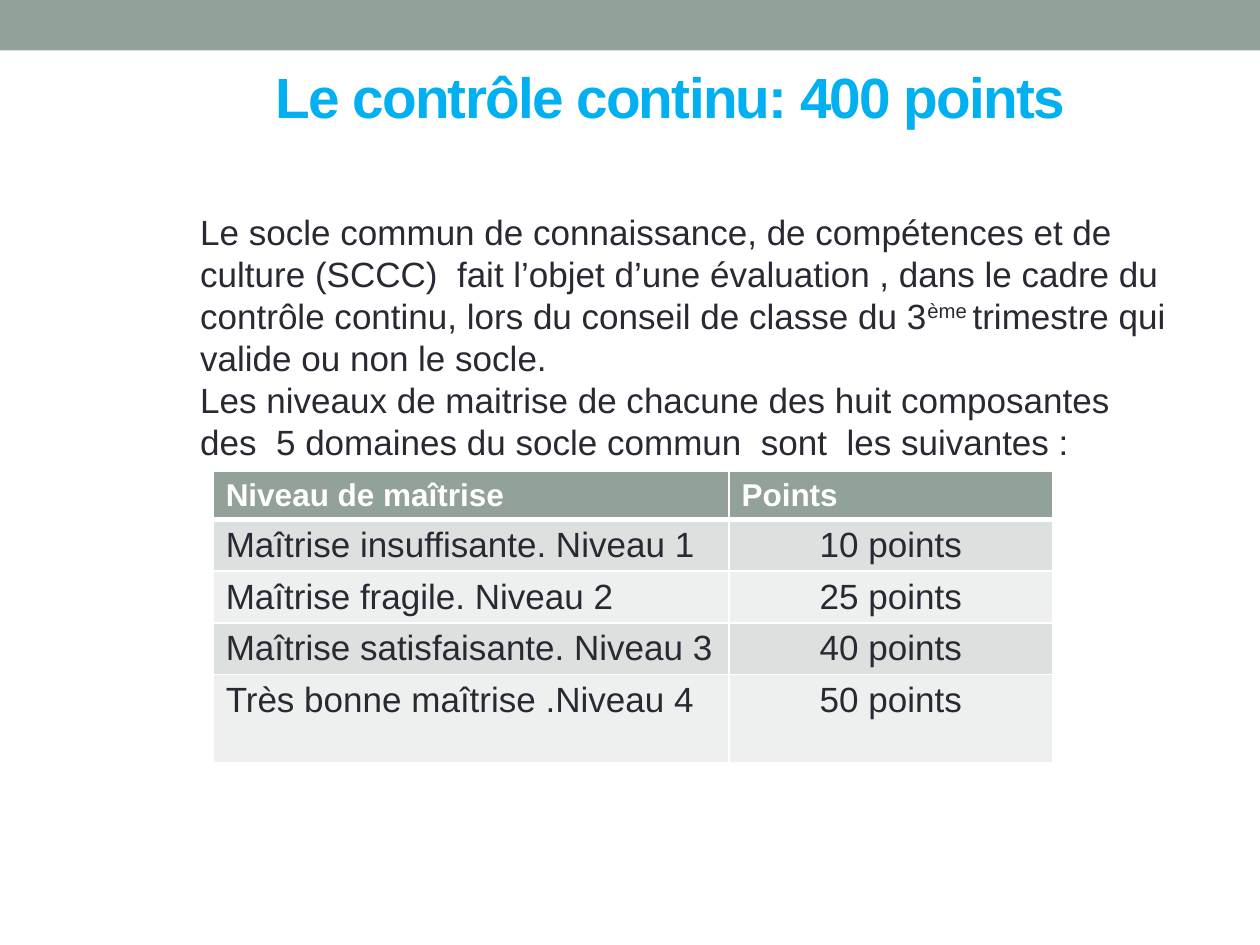
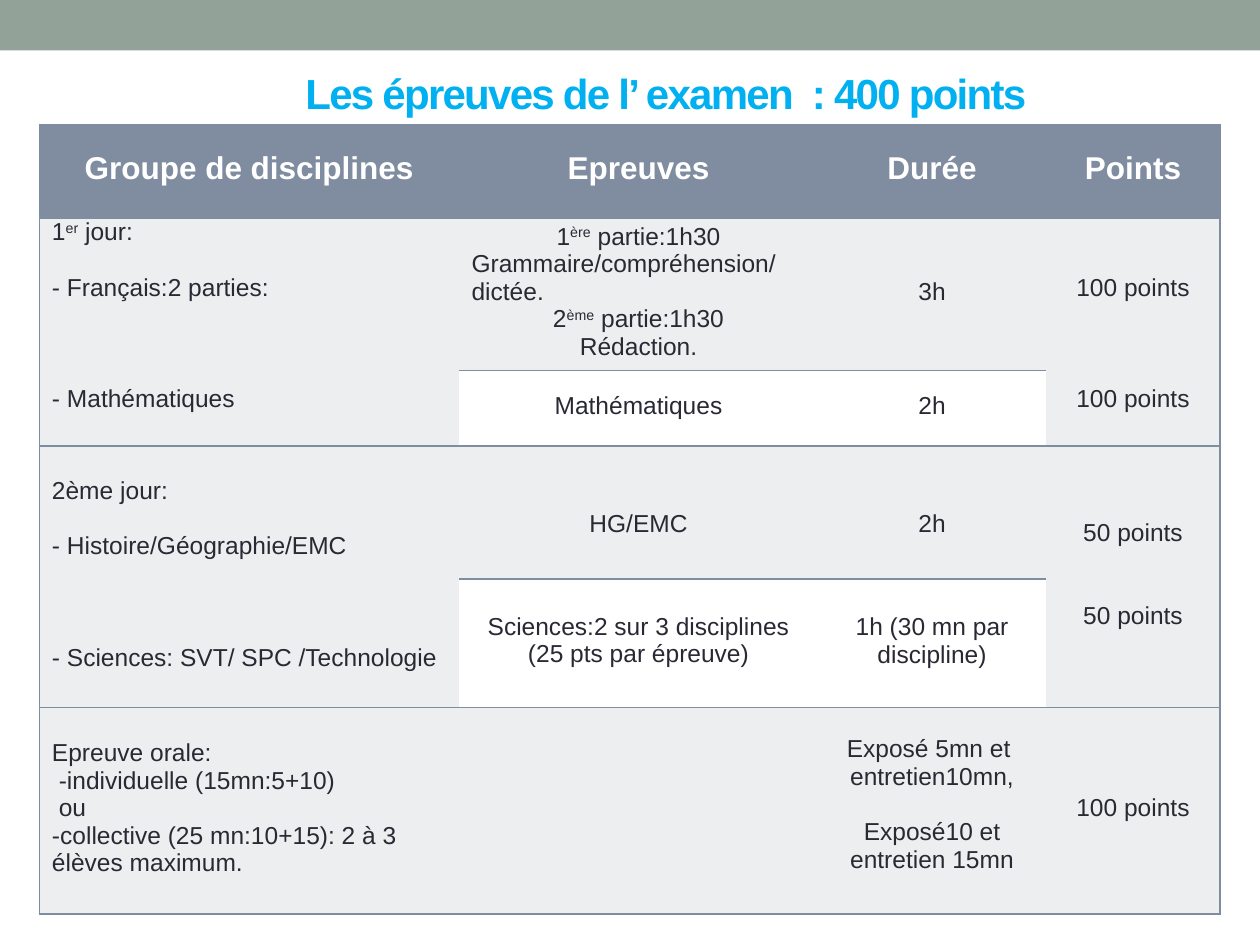
from dataclasses import dataclass

from lxml import etree
from pptx import Presentation
from pptx.dml.color import RGBColor
from pptx.enum.shapes import MSO_SHAPE
from pptx.enum.text import MSO_ANCHOR, MSO_AUTO_SIZE, PP_ALIGN
from pptx.oxml.ns import qn
from pptx.util import Pt

RECTANGLE = MSO_SHAPE.RECTANGLE
LEFT, CENTER = PP_ALIGN.LEFT, PP_ALIGN.CENTER
TOP, MIDDLE = MSO_ANCHOR.TOP, MSO_ANCHOR.MIDDLE
NO_AUTOFIT = MSO_AUTO_SIZE.NONE

FONT = "Arial"
GREEN, SLATE, BLUE = "93A299", "808DA0", "00B0F0"
INK, WHITE = "292934", "FFFFFF"
LEVEL_BANDS = ("DCE0DE", "EEF0EF")
EXAM_GREY = "EDEEF0"
TITLE_ONLY = 5
EXAM_LINE = 16


@dataclass
class Line:
    text: str
    gap: int = 0
    align: PP_ALIGN = CENTER


@dataclass
class ExamCell:
    row: int
    column: int
    lines: list
    fill: str = EXAM_GREY
    rows: int = 1
    blank_after: int = 0
    anchor: MSO_ANCHOR = MIDDLE


def color(value):
    return RGBColor.from_string(value)


def format_run(run, size, ink, bold=False):
    run.font.name = FONT
    run.font.size = Pt(size)
    run.font.bold = bold
    run.font.color.rgb = color(ink)


def write_paragraph(paragraph, text, size, ink=INK, bold=False, align=LEFT):
    paragraph.alignment = align
    for index, part in enumerate(text.split("^")):
        run = paragraph.add_run()
        run.text = part
        format_run(run, size, ink, bold)
        if index % 2:
            run.font._element.set("baseline", "30000")


def add_band(slide):
    band = slide.shapes.add_shape(RECTANGLE, 0, 0, Pt(720), Pt(28.8))
    band.shadow.inherit = False
    band.fill.solid()
    band.fill.fore_color.rgb = color(GREEN)
    band.line.fill.background()


def add_titled_slide(presentation, text, box, size, indent, bottom=3.6):
    slide = presentation.slides.add_slide(presentation.slide_layouts[TITLE_ONLY])
    add_band(slide)
    title = slide.shapes.title
    title.left, title.top, title.width, title.height = map(Pt, box)
    frame = title.text_frame
    frame.text = text
    frame.auto_size = NO_AUTOFIT
    frame.vertical_anchor = MIDDLE
    frame.margin_left = Pt(indent)
    frame.margin_top = Pt(min(bottom, 3.6))
    frame.margin_bottom = Pt(bottom)
    paragraph = frame.paragraphs[0]
    paragraph.alignment = LEFT
    run = paragraph.runs[0]
    format_run(run, size, BLUE, True)
    run.font._element.set("spc", "-100")
    return slide


def add_body(slide, texts, box):
    frame = slide.shapes.add_textbox(*map(Pt, box)).text_frame
    frame.word_wrap = True
    for index, text in enumerate(texts):
        paragraph = frame.add_paragraph() if index else frame.paragraphs[0]
        write_paragraph(paragraph, text, 20)


def add_grid(slide, left, top, widths, heights):
    table = slide.shapes.add_table(
        len(heights), len(widths), Pt(left), Pt(top), Pt(sum(widths)), Pt(sum(heights))
    ).table
    table.horz_banding = False
    for column, width in zip(table.columns, widths):
        column.width = Pt(width)
    for row, height in zip(table.rows, heights):
        row.height = Pt(height)
    return table


def set_borders(cell, **sides):
    properties = cell._tc.get_or_add_tcPr()
    for position, side in enumerate("LRTB"):
        ink, width = sides.get(side, (None, 1))
        line = etree.Element(qn("a:ln" + side), w=str(Pt(width)))
        if ink:
            fill = etree.SubElement(line, qn("a:solidFill"))
            etree.SubElement(fill, qn("a:srgbClr"), val=ink)
        else:
            etree.SubElement(line, qn("a:noFill"))
        properties.insert(position, line)


def fill_cell(cell, fill):
    cell.fill.solid()
    cell.fill.fore_color.rgb = color(fill)


def add_level_table(slide, rows):
    table = add_grid(slide, 121.8, 269.5, (294.8, 185), (27, 29.5, 29.5, 29.5, 50.5))
    for r, row in enumerate(rows):
        for c, text in enumerate(row):
            cell = table.cell(r, c)
            edge = (WHITE, 1)
            header_edge = (WHITE, 3)
            set_borders(cell, L=edge, R=edge,
                        T=header_edge if r == 1 else edge,
                        B=header_edge if r == 0 else edge)
            fill_cell(cell, LEVEL_BANDS[(r - 1) % 2] if r else GREEN)
            paragraph = cell.text_frame.paragraphs[0]
            if r:
                write_paragraph(paragraph, text, 20, align=CENTER if c else LEFT)
            else:
                write_paragraph(paragraph, text, 18, WHITE, True)


def write_exam_cell(table, item):
    cell = table.cell(item.row, item.column)
    if item.rows > 1:
        cell.merge(table.cell(item.row + item.rows - 1, item.column))
    fill_cell(cell, item.fill)
    cell.vertical_anchor = item.anchor
    cell.margin_top = Pt(item.lines[0].gap * EXAM_LINE)
    cell.margin_bottom = Pt(3 + item.blank_after * EXAM_LINE)
    for index, line in enumerate(item.lines):
        paragraph = cell.text_frame.paragraphs[0]
        if index:
            paragraph = cell.text_frame.add_paragraph()
            paragraph.space_before = Pt(line.gap * EXAM_LINE)
        header = item.row == 0
        write_paragraph(paragraph, line.text, 18 if header else 14,
                        WHITE if header else INK, header, line.align)


def add_exam_table(slide, headers, cells):
    heights = (53.5, 87, 41.5, 76, 73.5, 118)
    table = add_grid(slide, 22.5, 71.2, (239.8, 205.2, 130.3, 99.4), heights)
    for column, text in enumerate(headers):
        write_exam_cell(table, ExamCell(0, column, [Line(text)], SLATE))
    for item in cells:
        write_exam_cell(table, item)
    last_column = len(headers) - 1
    edge = (SLATE, 1)
    for r in range(len(heights)):
        for c in range(len(headers)):
            cell = table.cell(r, c)
            sides = {}
            if not cell.is_spanned:
                sides["T"] = edge
            if not cell.is_merge_origin:
                sides["B"] = edge
            if c == 0:
                sides["L"] = edge
            if c == last_column:
                sides["R"] = edge
            set_borders(cell, **sides)
    fill_cell(table.cell(5, 1), EXAM_GREY)


def build_continuous_assessment(presentation):
    slide = add_titled_slide(presentation, "Le contrôle continu: 400 points",
                             (47.5, 43.2, 672.5, 56.9), 32.4, 110, 37)
    add_level_table(slide, (
        ("Niveau de maîtrise", "Points"),
        ("Maîtrise insuffisante. Niveau 1", "10 points"),
        ("Maîtrise fragile. Niveau 2", "25 points"),
        ("Maîtrise satisfaisante. Niveau 3", "40 points"),
        ("Très bonne maîtrise .Niveau 4", "50 points"),
    ))
    add_body(slide, (
        "Le socle commun de connaissance, de compétences et de culture (SCCC)  fait "
        "l’objet d’une évaluation , dans le cadre du contrôle continu, lors du conseil "
        "de classe du 3^ème ^trimestre qui valide ou non le socle.",
        "Les niveaux de maitrise de chacune des huit composantes des  5 domaines du "
        "socle commun  sont  les suivantes :",
    ), (107.3, 116.6, 567.4, 152.6))


def build_exam(presentation):
    slide = add_titled_slide(presentation, "Les épreuves de l’ examen  : 400 points",
                             (42.5, 34.6, 653, 36.7), 24, 132)
    add_exam_table(slide, ("Groupe de disciplines", "Epreuves", "Durée", "Points"), (
        ExamCell(1, 0, [Line("1^er^ jour:", 0, LEFT),
                        Line("- Français:2 parties:", 1, LEFT),
                        Line("- Mathématiques", 3, LEFT)], rows=2, blank_after=1),
        ExamCell(1, 1, [Line("1^ère^ partie:1h30"),
                        Line("Grammaire/compréhension/", 0, LEFT),
                        Line("dictée.", 0, LEFT),
                        Line("2^ème^ partie:1h30"),
                        Line("Rédaction.")]),
        ExamCell(1, 2, [Line("3h")]),
        ExamCell(1, 3, [Line("100 points", 1), Line("100 points", 3)], rows=2),
        ExamCell(2, 1, [Line("Mathématiques")], WHITE),
        ExamCell(2, 2, [Line("2h")], WHITE),
        ExamCell(3, 0, [Line("2ème jour:", 0, LEFT),
                        Line("- Histoire/Géographie/EMC", 1, LEFT),
                        Line("- Sciences: SVT/ SPC /Technologie", 3, LEFT)], rows=2),
        ExamCell(3, 1, [Line("HG/EMC", 1)]),
        ExamCell(3, 2, [Line("2h", 1)]),
        ExamCell(3, 3, [Line("50 points"), Line("50 points", 2)], rows=2),
        ExamCell(4, 1, [Line("Sciences:2 sur 3 disciplines (25 pts par épreuve)", 1)],
                 WHITE, blank_after=1),
        ExamCell(4, 2, [Line("1h (30 mn par discipline)")], WHITE),
        ExamCell(5, 0, [Line("Epreuve orale:", 0, LEFT),
                        Line(" -individuelle (15mn:5+10)", 0, LEFT),
                        Line(" ou", 0, LEFT),
                        Line("-collective (25 mn:10+15): 2 à 3 élèves maximum.", 0, LEFT)]),
        ExamCell(5, 2, [Line("Exposé 5mn et  entretien10mn,", 1),
                        Line("Exposé10 et entretien 15mn", 1)], anchor=TOP),
        ExamCell(5, 3, [Line("100 points")]),
    ))


def main():
    presentation = Presentation()
    presentation.slide_width = Pt(720)
    presentation.slide_height = Pt(540)
    build_continuous_assessment(presentation)
    build_exam(presentation)
    presentation.save("out.pptx")


if __name__ == "__main__":
    main()
